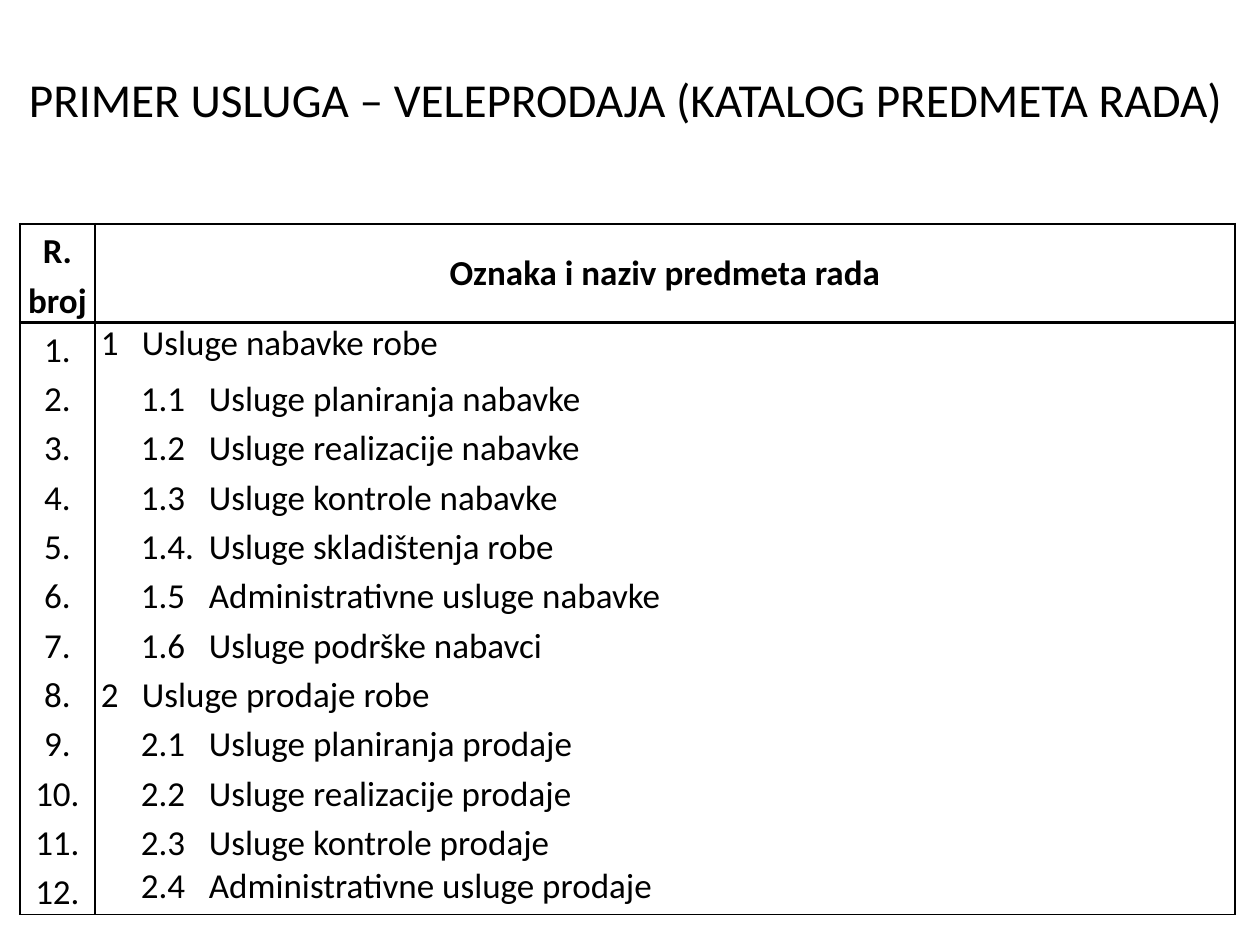
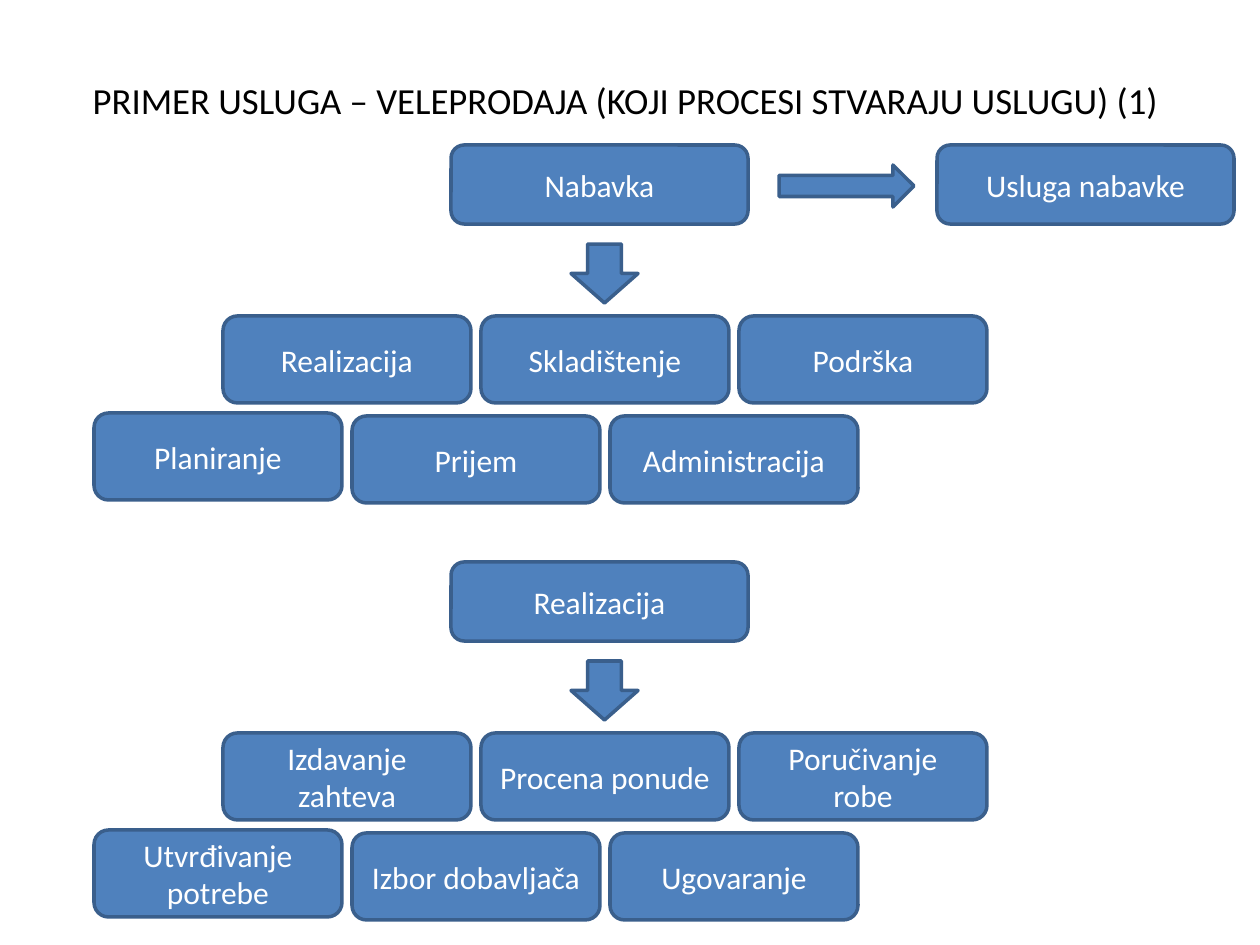
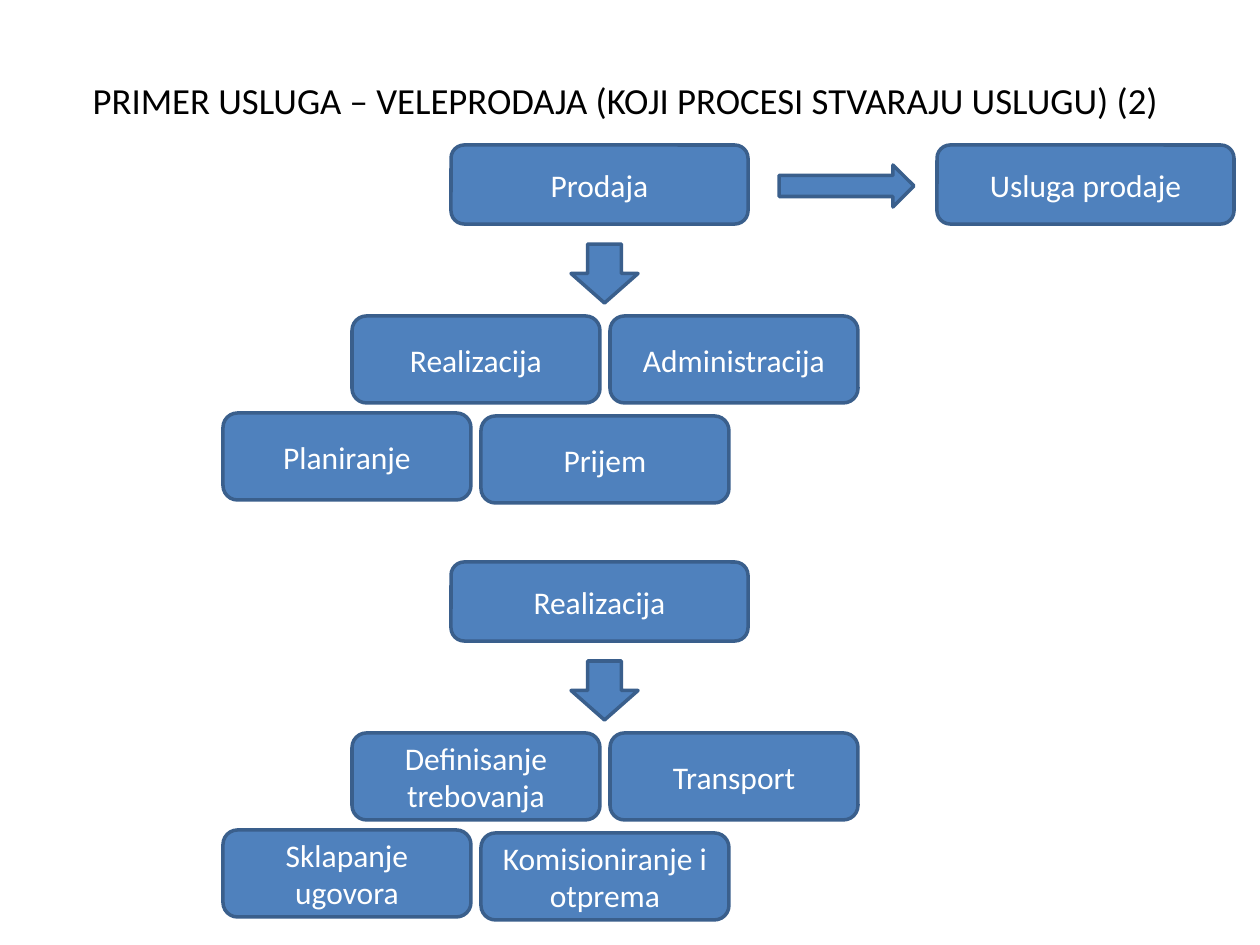
from lxml import etree
from pptx import Presentation
from pptx.dml.color import RGBColor
from pptx.enum.shapes import MSO_SHAPE
from pptx.enum.text import MSO_ANCHOR, MSO_AUTO_SIZE, PP_ALIGN
from pptx.oxml.ns import qn
from pptx.util import Emu, Pt

ROUNDED = MSO_SHAPE.ROUNDED_RECTANGLE
RIGHT_ARROW = MSO_SHAPE.RIGHT_ARROW
DOWN_ARROW = MSO_SHAPE.DOWN_ARROW
MIDDLE = MSO_ANCHOR.MIDDLE
TOP = MSO_ANCHOR.TOP
CENTER = PP_ALIGN.CENTER
LEFT = PP_ALIGN.LEFT
NO_AUTOFIT = MSO_AUTO_SIZE.NONE

PIXELS_PER_INCH = 126
SLIDE_WIDTH, SLIDE_HEIGHT = 1260, 945
TITLE_ONLY_LAYOUT = 5
FONT = "Calibri"
BLACK, WHITE = "000000", "FFFFFF"
BLUE, DARK_BLUE = "4F81BD", "3A5F8C"

FIRST_SLOT, SLOT_STEP = 94, 129
LEAF_WIDTH, LEAF_HEIGHT = 248, 87
ROOT_LEFT, ROOT_WIDTH, ROOT_HEIGHT = 451, 297, 79
RESULT_LEFT = 937
STAGE_TOPS = (145, 562)
ARROW_DROP, UPPER_DROP, LOWER_DROP = 99, 171, 271
FIRST_LEAF_RAISE = 3

CATALOGUE = [
    ("1", "Usluge nabavke robe"),
    ("1.1", "Usluge planiranja nabavke"),
    ("1.2", "Usluge realizacije nabavke"),
    ("1.3", "Usluge kontrole nabavke"),
    ("1.4.", "Usluge skladištenja robe"),
    ("1.5", "Administrativne usluge nabavke"),
    ("1.6", "Usluge podrške nabavci"),
    ("2", "Usluge prodaje robe"),
    ("2.1", "Usluge planiranja prodaje"),
    ("2.2", "Usluge realizacije prodaje"),
    ("2.3", "Usluge kontrole prodaje"),
    ("2.4", "Administrativne usluge prodaje"),
]

PROCESS_PAGES = [
    ("Usluga nabavke", 0, [
        ("Nabavka", ["Planiranje", "Realizacija", "Prijem", "Skladištenje",
                     "Administracija", "Podrška"]),
        ("Realizacija", ["Utvrđivanje potrebe", "Izdavanje zahteva", "Izbor dobavljača",
                         "Procena ponude", "Ugovaranje", "Poručivanje robe"]),
    ]),
    ("Usluga prodaje", 1, [
        ("Prodaja", ["Planiranje", "Realizacija", "Prijem", "Administracija"]),
        ("Realizacija", ["Sklapanje ugovora", "Definisanje trebovanja",
                         "Komisioniranje i otprema", "Transport"]),
    ]),
]


def px(length):
    return Emu(round(length * 914400 / PIXELS_PER_INCH))


def colour(value):
    return RGBColor.from_string(value)


def format_paragraph(paragraph, size, font_colour, bold=False, align=CENTER, spacing=1.0):
    paragraph.alignment = align
    paragraph.line_spacing = spacing
    for span in paragraph.runs:
        span.font.name = FONT
        span.font.size = Pt(size)
        span.font.bold = bold
        span.font.color.rgb = colour(font_colour)


def add_page(deck, title, size):
    page = deck.slides.add_slide(deck.slide_layouts[TITLE_ONLY_LAYOUT])
    heading = page.shapes.title
    heading.left, heading.top, heading.width, heading.height = map(px, (15, 63, 1221, 82))
    frame = heading.text_frame
    frame.text = title
    frame.word_wrap = True
    frame.auto_size = NO_AUTOFIT
    frame.vertical_anchor = MIDDLE
    frame.margin_left = frame.margin_right = px(6)
    format_paragraph(frame.paragraphs[0], size, BLACK, spacing=0.8)
    return page


def add_block(page, kind, left, top, width, height, text=""):
    block = page.shapes.add_shape(kind, px(left), px(top), px(width), px(height))
    block.shadow.inherit = False
    block.fill.solid()
    block.fill.fore_color.rgb = colour(BLUE)
    block.line.color.rgb = colour(DARK_BLUE)
    block.line.width = Pt(2)
    if text:
        frame = block.text_frame
        frame.text = text
        frame.word_wrap = True
        frame.vertical_anchor = MIDDLE
        format_paragraph(frame.paragraphs[0], 18, WHITE)


def add_stage(page, top, first_slot, root, leaves):
    add_block(page, ROUNDED, ROOT_LEFT, top, ROOT_WIDTH, ROOT_HEIGHT, root)
    add_block(page, DOWN_ARROW, 571, top + ARROW_DROP, 67, 59)
    for index, leaf in enumerate(leaves):
        drop = UPPER_DROP if index % 2 else LOWER_DROP
        if index == 0:
            drop -= FIRST_LEAF_RAISE
        left = FIRST_SLOT + SLOT_STEP * (first_slot + index)
        add_block(page, ROUNDED, left, top + drop, LEAF_WIDTH, LEAF_HEIGHT, leaf)


def add_process_page(deck, number, result, first_slot, stages):
    title = f"PRIMER USLUGA – VELEPRODAJA (KOJI PROCESI STVARAJU USLUGU) ({number})"
    page = add_page(deck, title, 21)
    add_block(page, ROUNDED, RESULT_LEFT, STAGE_TOPS[0], ROOT_WIDTH, ROOT_HEIGHT, result)
    add_block(page, RIGHT_ARROW, 779, 165, 135, 42)
    for top, (root, leaves) in zip(STAGE_TOPS, stages):
        add_stage(page, top, first_slot, root, leaves)


def set_borders(cell, left, right, top, bottom):
    properties = cell._tc.get_or_add_tcPr()
    for tag, points in (("lnL", left), ("lnR", right), ("lnT", top), ("lnB", bottom)):
        border = etree.SubElement(properties, qn(f"a:{tag}"), w=str(Pt(points)))
        if points:
            fill = etree.SubElement(border, qn("a:solidFill"))
            etree.SubElement(fill, qn("a:srgbClr"), val=BLACK)
        else:
            etree.SubElement(border, qn("a:noFill"))


def fill_cell(cell, text, borders, anchor=TOP, **style):
    set_borders(cell, *borders)
    cell.fill.background()
    cell.margin_left = cell.margin_right = px(6)
    cell.margin_top = cell.margin_bottom = 0
    cell.vertical_anchor = anchor
    cell.text_frame.text = text
    paragraph = cell.text_frame.paragraphs[0]
    format_paragraph(paragraph, 20, BLACK, **style)
    return paragraph


def set_hanging_indent(paragraph, number_left, text_left):
    properties = paragraph._p.get_or_add_pPr()
    properties.set("marL", str(px(text_left)))
    properties.set("indent", str(px(number_left - text_left)))


def add_catalogue(page):
    row_count = len(CATALOGUE) + 1
    frame = page.shapes.add_table(row_count, 2, px(20), px(224), px(1215), px(677))
    table = frame.table
    table.first_row = table.horz_banding = False
    table.columns[0].width, table.columns[1].width = px(75), px(1140)
    for row in table.rows:
        row.height = px(48)
    table.rows[0].height = px(97)

    fill_cell(table.cell(0, 0), "R. broj", (1.5, 1, 1.5, 1.5), MIDDLE, bold=True, spacing=1.15)
    fill_cell(table.cell(0, 1), "Oznaka i naziv predmeta rada", (1, 1, 1.5, 1.5), MIDDLE,
              bold=True)
    last = len(CATALOGUE)
    for index, (code, name) in enumerate(CATALOGUE, start=1):
        top = 1.5 if index == 1 else 0
        bottom = 1 if index == last else 0
        fill_cell(table.cell(index, 0), f"{index}.", (1.5, 1, top, bottom), spacing=1.15)
        spacing = 1.0 if index in (1, last) else 1.15
        entry = fill_cell(table.cell(index, 1), f"{code}\t{name}", (1, 1, top, bottom),
                          align=LEFT, spacing=spacing)
        if "." in code:
            set_hanging_indent(entry, 40, 108)
        else:
            set_hanging_indent(entry, 0, 41)


def main():
    deck = Presentation()
    deck.slide_width, deck.slide_height = px(SLIDE_WIDTH), px(SLIDE_HEIGHT)
    add_catalogue(add_page(deck, "PRIMER USLUGA – VELEPRODAJA (KATALOG PREDMETA RADA)", 27))
    for number, (result, first_slot, stages) in enumerate(PROCESS_PAGES, start=1):
        add_process_page(deck, number, result, first_slot, stages)
    deck.save("out.pptx")


if __name__ == "__main__":
    main()
